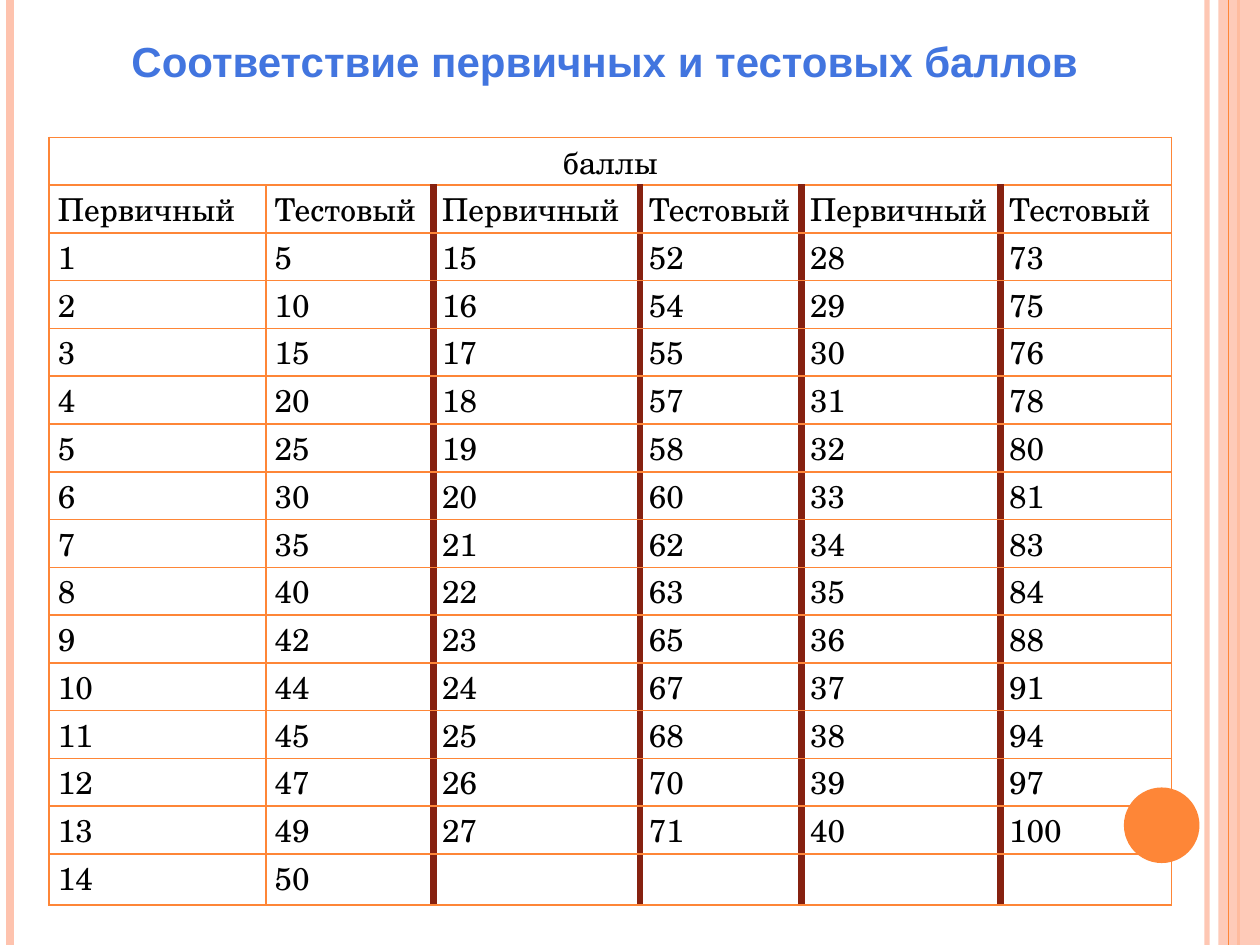
from dataclasses import dataclass
from itertools import zip_longest

from lxml import etree
from pptx import Presentation
from pptx import util as u
from pptx.dml.color import RGBColor
from pptx.enum import shapes, text
from pptx.oxml import ns

ORANGE, PEACH, MAROON = "FE8637", "FEC3AE", "862110"
BLACK, BLUE = "000000", "4275DF"
TABLE_FONT, TITLE_FONT = "TeX Gyre Schola", "Arial"


@dataclass
class Stripe:
    x: float
    color: str
    width: float
    alpha: int = 100


@dataclass
class Panel:
    kind: shapes.MSO_SHAPE
    x: float
    y: float
    w: float
    h: float
    color: str
    alpha: int = 100


@dataclass
class ScoreBlock:
    first: int
    tests: list[int]


DECOR = [
    Stripe(9.58, PEACH, 3, 93),
    Stripe(0.08, PEACH, 4.5),
    Stripe(9.83, ORANGE, 1.5),
    Panel(shapes.MSO_SHAPE.RECTANGLE, 9.67, 0, 0.33, 7.5, PEACH, 87),
    Stripe(9.75, ORANGE, 0.75),
    Panel(shapes.MSO_SHAPE.OVAL, 8.92, 6.25, 0.6, 0.6, ORANGE),
]

# Primary scores run on by one from the first of each block
BLOCKS = [
    ScoreBlock(1, [5, 10, 15, 20, 25, 30, 35, 40, 42, 44, 45, 47, 49, 50]),
    ScoreBlock(15, [52, 54, 55, 57, 58, 60, 62, 63, 65, 67, 68, 70, 71]),
    ScoreBlock(28, [73, 75, 76, 78, 80, 81, 83, 84, 88, 91, 94, 97, 100]),
]
COL_WIDTHS = [1.72, 1.33, 1.64, 1.28, 1.58, 1.36]
TABLE_HEIGHT = 6.07
LINE_HEIGHT = 24  # points, so that a line fits its row
THICK_EDGES = range(2, 6)  # column boundaries drawn in maroon


def rgb(color: str) -> RGBColor:
    return RGBColor.from_string(color)


def set_alpha(fmt_element, percent: int) -> None:
    if percent < 100:
        clr = next(fmt_element.iter(ns.qn("a:srgbClr")))
        etree.SubElement(clr, ns.qn("a:alpha")).set("val", str(percent * 1000))


def add_stripe(slide, stripe: Stripe) -> None:
    x = u.Inches(stripe.x)
    s = slide.shapes.add_connector(shapes.MSO_CONNECTOR.STRAIGHT, x, 0, x, u.Inches(7.5))
    s.line.color.rgb = rgb(stripe.color)
    s.line.width = u.Pt(stripe.width)
    sp_pr = s._element.spPr
    set_alpha(sp_pr, stripe.alpha)
    etree.SubElement(sp_pr, ns.qn("a:effectLst"))


def add_panel(slide, panel: Panel) -> None:
    box = map(u.Inches, (panel.x, panel.y, panel.w, panel.h))
    s = slide.shapes.add_shape(panel.kind, *box)
    s.shadow.inherit = False
    s.fill.solid()
    s.fill.fore_color.rgb = rgb(panel.color)
    s.line.fill.background()
    set_alpha(s._element.spPr, panel.alpha)


def style_paragraph(p, font: str, size: float, color: str, bold: bool = False) -> None:
    p.font.name = font
    p.font.size = u.Pt(size)
    p.font.bold = bold
    p.font.color.rgb = rgb(color)


def set_borders(cell, thick_sides: str) -> None:
    tc_pr = cell._tc.get_or_add_tcPr()
    for i, side in enumerate("LRTB"):
        color, width = (MAROON, 4.5) if side in thick_sides else (ORANGE, 1)
        ln = etree.Element(ns.qn(f"a:ln{side}"), w=str(u.Pt(width)))
        fill = etree.SubElement(ln, ns.qn("a:solidFill"))
        etree.SubElement(fill, ns.qn("a:srgbClr")).set("val", color)
        tc_pr.insert(i, ln)


def fill_cell(cell, content: str, side_inset: float, thick_sides: str = "") -> None:
    cell.fill.background()
    cell.margin_left = cell.margin_right = u.Inches(side_inset)
    cell.margin_top, cell.margin_bottom = u.Inches(0.04), 0
    p = cell.text_frame.paragraphs[0]
    p.text = content
    p.line_spacing = u.Pt(LINE_HEIGHT)
    style_paragraph(p, TABLE_FONT, 18, BLACK)
    set_borders(cell, thick_sides)


def score_rows() -> list[list[str]]:
    columns = []
    for block in BLOCKS:
        columns.append(["Первичный", *range(block.first, block.first + len(block.tests))])
        columns.append(["Тестовый", *block.tests])
    return [[str(v) for v in row] for row in zip_longest(*columns, fillvalue="")]


def add_score_table(slide) -> None:
    rows = score_rows()
    n_rows, n_cols = len(rows) + 1, len(COL_WIDTHS)
    table = slide.shapes.add_table(
        n_rows, n_cols, u.Inches(0.39), u.Inches(1.09),
        u.Inches(sum(COL_WIDTHS)), u.Inches(TABLE_HEIGHT)).table
    table.first_row = table.horz_banding = False
    for col, width in zip(table.columns, COL_WIDTHS):
        col.width = u.Inches(width)

    # Heading across all columns
    for c in range(n_cols):
        fill_cell(table.cell(0, c), "" if c else "баллы", 0.03)
    heading = table.cell(0, 0)
    heading.merge(table.cell(0, n_cols - 1))
    heading.vertical_anchor = text.MSO_ANCHOR.MIDDLE
    heading.text_frame.paragraphs[0].alignment = text.PP_ALIGN.CENTER

    # Column names and scores
    for r, row in enumerate(rows, 1):
        for c, value in enumerate(row):
            sides = "L" * (c in THICK_EDGES) + "R" * (c + 1 in THICK_EDGES)
            fill_cell(table.cell(r, c), value, 0.07, sides)


def add_title(slide, content: str) -> None:
    s = slide.shapes.add_textbox(*map(u.Inches, (0.31, 0.23, 8.98, 0.5)))
    tf = s.text_frame
    tf.word_wrap = True
    p = tf.paragraphs[0]
    p.text = content
    p.alignment = text.PP_ALIGN.CENTER
    style_paragraph(p, TITLE_FONT, 24, BLUE, bold=True)


def main() -> None:
    prs = Presentation()
    prs.slide_width, prs.slide_height = u.Inches(10), u.Inches(7.5)
    slide = prs.slides.add_slide(prs.slide_layouts[6])

    # Side decoration
    for item in DECOR:
        if isinstance(item, Stripe):
            add_stripe(slide, item)
        else:
            add_panel(slide, item)

    # Content
    add_score_table(slide)
    add_title(slide, "Соответствие первичных и тестовых баллов")
    prs.save("out.pptx")


if __name__ == "__main__":
    main()
